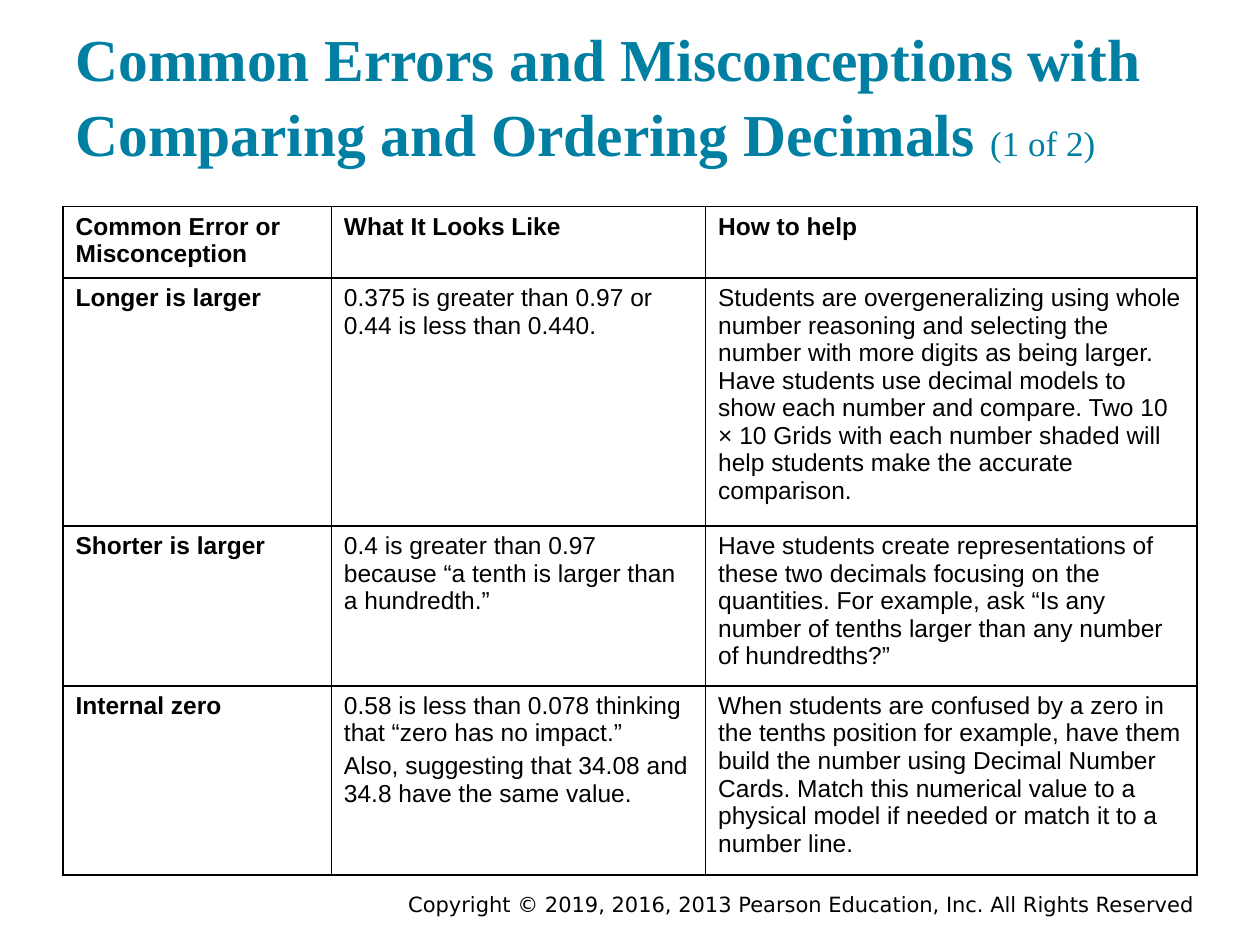
from lxml import etree
from pptx import Presentation
from pptx.dml.color import RGBColor
from pptx.enum.text import MSO_ANCHOR, MSO_AUTO_SIZE, PP_ALIGN
from pptx.oxml.ns import qn
from pptx.util import Inches, Pt

LEFT, RIGHT = PP_ALIGN.LEFT, PP_ALIGN.RIGHT
BOTTOM, MIDDLE = MSO_ANCHOR.BOTTOM, MSO_ANCHOR.MIDDLE
NO_AUTOFIT = MSO_AUTO_SIZE.NONE
TITLE_ONLY = 5

COLORS = {"title": "007FA3", "text": "000000", "border": "000000", "cell": "FFFFFF"}

TITLE = "Common Errors and Misconceptions with Comparing and Ordering Decimals "
TITLE_PART = "(1 of 2)"
COPYRIGHT = "Copyright © 2019, 2016, 2013 Pearson Education, Inc. All Rights Reserved"

COLUMN_WIDTHS = [2.13, 2.97, 3.9]
ROW_HEIGHTS = [0.53, 1.85, 1.19, 1.41]
ROWS = [
    ["Common Error or Misconception", "What It Looks Like", "How to help"],
    [
        "Longer is larger",
        "0.375 is greater than 0.97 or 0.44 is less than 0.440.",
        "Students are overgeneralizing using whole number reasoning and selecting "
        "the number with more digits as being larger. Have students use decimal "
        "models to show each number and compare. Two 10 × 10 Grids with each number "
        "shaded will help students make the accurate comparison.",
    ],
    [
        "Shorter is larger",
        "0.4 is greater than 0.97 because “a tenth is larger than a hundredth.”",
        "Have students create representations of these two decimals focusing on the "
        "quantities. For example, ask “Is any number of tenths larger than any "
        "number of hundredths?”",
    ],
    [
        "Internal zero",
        "0.58 is less than 0.078 thinking that “zero has no impact.”\n"
        "Also, suggesting that 34.08 and 34.8 have the same value.",
        "When students are confused by a zero in the tenths position for example, "
        "have them build the number using Decimal Number Cards. Match this numerical "
        "value to a physical model if needed or match it to a number line.",
    ],
]


def format_font(font, name, size, color, bold=False):
    font.name = name
    font.size = Pt(size)
    font.bold = bold
    font.color.rgb = RGBColor.from_string(COLORS[color])


def add_title(slide):
    title = slide.shapes.title
    title.left, title.top = Inches(0.5), Inches(0.24)
    title.width, title.height = Inches(9), Inches(1.2)
    frame = title.text_frame
    frame.word_wrap = True
    frame.auto_size = NO_AUTOFIT
    frame.vertical_anchor = BOTTOM
    frame.margin_left = frame.margin_right = Inches(0.1)
    frame.margin_top = frame.margin_bottom = Inches(0.1)
    paragraph = frame.paragraphs[0]
    paragraph.alignment = LEFT
    paragraph.line_spacing = 1.05
    for text, size, bold in [(TITLE, 34, True), (TITLE_PART, 20, False)]:
        run = paragraph.add_run()
        run.text = text
        format_font(run.font, "Times New Roman", size, "title", bold)


def set_borders(cell):
    properties = cell._tc.get_or_add_tcPr()
    for index, side in enumerate(("a:lnL", "a:lnR", "a:lnT", "a:lnB")):
        line = etree.Element(qn(side), w=str(Pt(1)))
        fill = etree.SubElement(line, qn("a:solidFill"))
        etree.SubElement(fill, qn("a:srgbClr"), val=COLORS["border"])
        properties.insert(index, line)


def fill_cell(cell, text, bold):
    cell.fill.solid()
    cell.fill.fore_color.rgb = RGBColor.from_string(COLORS["cell"])
    set_borders(cell)
    cell.text_frame.text = text
    for index, paragraph in enumerate(cell.text_frame.paragraphs):
        if index:
            paragraph.space_before = Pt(3)
        for run in paragraph.runs:
            format_font(run.font, "Arial", 14, "text", bold)


def add_error_table(slide):
    frame = slide.shapes.add_table(
        len(ROWS), len(COLUMN_WIDTHS), Inches(0.5), Inches(1.64),
        Inches(sum(COLUMN_WIDTHS)), Inches(sum(ROW_HEIGHTS)))
    table = frame.table
    table.horz_banding = False
    for column, width in zip(table.columns, COLUMN_WIDTHS):
        column.width = Inches(width)
    for row, height in zip(table.rows, ROW_HEIGHTS):
        row.height = Inches(height)
    # The header row and the first column are bold
    for row_index, texts in enumerate(ROWS):
        for column_index, text in enumerate(texts):
            bold = row_index == 0 or column_index == 0
            fill_cell(table.cell(row_index, column_index), text, bold)


def add_copyright(slide):
    box = slide.shapes.add_textbox(Inches(2.92), Inches(7.05), Inches(6.66), Inches(0.25))
    frame = box.text_frame
    frame.word_wrap = True
    frame.vertical_anchor = MIDDLE
    frame.text = COPYRIGHT
    paragraph = frame.paragraphs[0]
    paragraph.alignment = RIGHT
    format_font(paragraph.runs[0].font, "DejaVu Sans", 12, "text")


def main():
    presentation = Presentation()
    presentation.slide_width, presentation.slide_height = Inches(10), Inches(7.5)
    slide = presentation.slides.add_slide(presentation.slide_layouts[TITLE_ONLY])
    add_copyright(slide)
    add_title(slide)
    add_error_table(slide)
    presentation.save("out.pptx")


if __name__ == "__main__":
    main()
